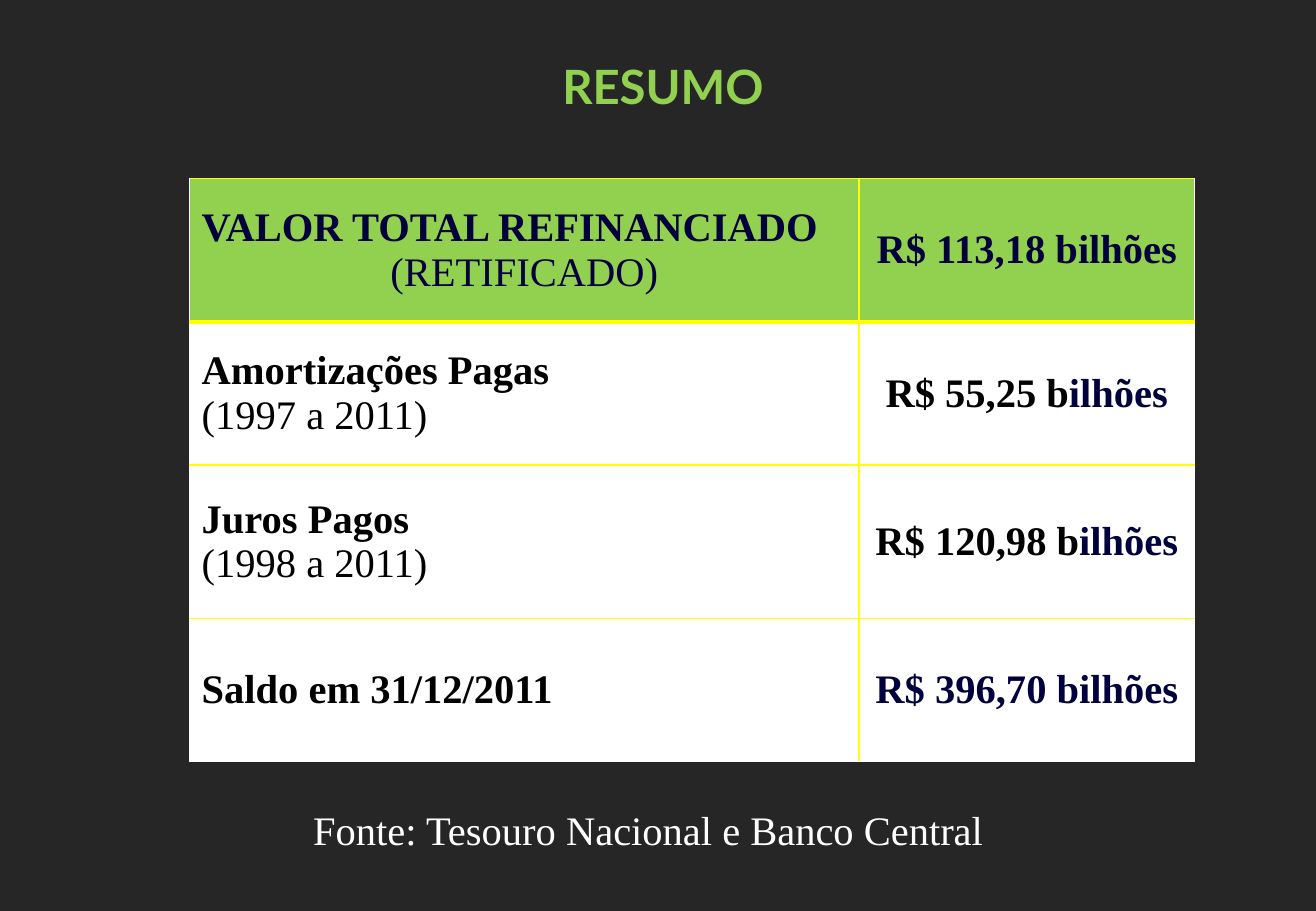
from dataclasses import dataclass

import pptx
import pptx.dml.color
import pptx.enum.text
import pptx.oxml
import pptx.oxml.ns
import pptx.util
from pptx.dml.color import RGBColor
from pptx.util import Inches

BACKGROUND = RGBColor(0x26, 0x26, 0x26)
GREEN = RGBColor(0x92, 0xD0, 0x50)
YELLOW = RGBColor(0xFF, 0xFF, 0x00)
NAVY = RGBColor(0x00, 0x00, 0x3D)
BLACK = RGBColor(0x00, 0x00, 0x00)
WHITE = RGBColor(0xFF, 0xFF, 0xFF)

SERIF = "Times New Roman"
LEFT = pptx.enum.text.PP_ALIGN.LEFT
CENTER = pptx.enum.text.PP_ALIGN.CENTER
MIDDLE = pptx.enum.text.MSO_ANCHOR.MIDDLE

COLUMN_WIDTHS = (5.51, 2.76)
HEADER_RULE = 3
INNER_RULE = 1


@dataclass(frozen=True)
class SummaryRow:
    item: str
    amount: str
    unit: str
    height: float = 1.18
    detail: str = ""
    detail_align: int = LEFT
    item_color: RGBColor = BLACK
    amount_color: RGBColor = BLACK
    fill: RGBColor = WHITE


SUMMARY = (
    SummaryRow("VALOR TOTAL REFINANCIADO", "R$ 113,18 b", "ilhões",
               detail="(RETIFICADO)", detail_align=CENTER,
               item_color=NAVY, amount_color=NAVY, fill=GREEN),
    SummaryRow("Amortizações Pagas", "R$ 55,25 b", "ilhões", detail="(1997 a 2011)"),
    SummaryRow("Juros Pagos", "R$ 120,98 b", "ilhões", height=1.26, detail="(1998 a 2011)"),
    SummaryRow("Saldo em 31/12/2011", "R$ 396,70 b", "ilhões", amount_color=NAVY),
)


def write(paragraph, text: str, *, color: RGBColor, font: str = SERIF, size: int = 24,
          bold: bool = False, align: int = LEFT) -> None:
    """Append a formatted run to the paragraph."""
    paragraph.alignment = align
    run = paragraph.add_run()
    run.text = text
    run.font.name = font
    run.font.size = pptx.util.Pt(size)
    run.font.bold = bold
    run.font.color.rgb = color


def add_border(cell, side: str, width: float) -> None:
    """Draw a yellow rule on the L, R, T or B side; call in that order, before the fill."""
    cell._tc.get_or_add_tcPr().append(pptx.oxml.parse_xml(
        f'<a:ln{side} {pptx.oxml.ns.nsdecls("a")} w="{pptx.util.Pt(width)}">'
        f'<a:solidFill><a:srgbClr val="{YELLOW}"/></a:solidFill></a:ln{side}>'))


def add_inner_borders(cell, row: int, column: int) -> None:
    add_border(cell, "L" if column else "R", INNER_RULE)
    add_border(cell, "T", HEADER_RULE if row == 1 else INNER_RULE)
    if row < len(SUMMARY) - 1:
        add_border(cell, "B", HEADER_RULE if row == 0 else INNER_RULE)


def add_summary_table(slide) -> None:
    heights = [entry.height for entry in SUMMARY]
    table = slide.shapes.add_table(
        len(SUMMARY), len(COLUMN_WIDTHS), Inches(1.56), Inches(1.47),
        Inches(sum(COLUMN_WIDTHS)), Inches(sum(heights))).table
    table.horz_banding = False
    for column, width in zip(table.columns, COLUMN_WIDTHS):
        column.width = Inches(width)

    for index, entry in enumerate(SUMMARY):
        table.rows[index].height = Inches(entry.height)
        for column in range(len(COLUMN_WIDTHS)):
            cell = table.cell(index, column)
            add_inner_borders(cell, index, column)
            cell.fill.solid()
            cell.fill.fore_color.rgb = entry.fill
            cell.vertical_anchor = MIDDLE

        description = table.cell(index, 0).text_frame
        write(description.paragraphs[0], entry.item, color=entry.item_color, bold=True)
        if entry.detail:
            write(description.add_paragraph(), entry.detail,
                  color=entry.item_color, align=entry.detail_align)

        value = table.cell(index, 1).text_frame.paragraphs[0]
        if entry.amount_color == NAVY:
            write(value, entry.amount + entry.unit, color=NAVY, bold=True, align=CENTER)
        else:
            write(value, entry.amount, color=entry.amount_color, bold=True, align=CENTER)
            write(value, entry.unit, color=NAVY, bold=True, align=CENTER)


def main() -> None:
    deck = pptx.Presentation()
    deck.slide_width, deck.slide_height = Inches(10.83), Inches(7.5)
    slide = deck.slides.add_slide(deck.slide_layouts.get_by_name("Title Only"))
    slide.background.fill.solid()
    slide.background.fill.fore_color.rgb = BACKGROUND

    heading = slide.shapes.title
    heading.left, heading.top = Inches(0.61), Inches(0.42)
    heading.width, heading.height = Inches(9.69), Inches(0.57)
    heading.text_frame.vertical_anchor = MIDDLE
    write(heading.text_frame.paragraphs[0], "RESUMO", color=GREEN,
          font="Lato", size=28, bold=True, align=CENTER)

    add_summary_table(slide)

    source = slide.shapes.add_textbox(
        Inches(1.95), Inches(6.58), Inches(6.77), Inches(0.5)).text_frame
    source.word_wrap = True
    write(source.paragraphs[0], "Fonte: Tesouro Nacional e Banco Central",
          color=WHITE, align=CENTER)

    deck.save("out.pptx")


if __name__ == "__main__":
    main()
